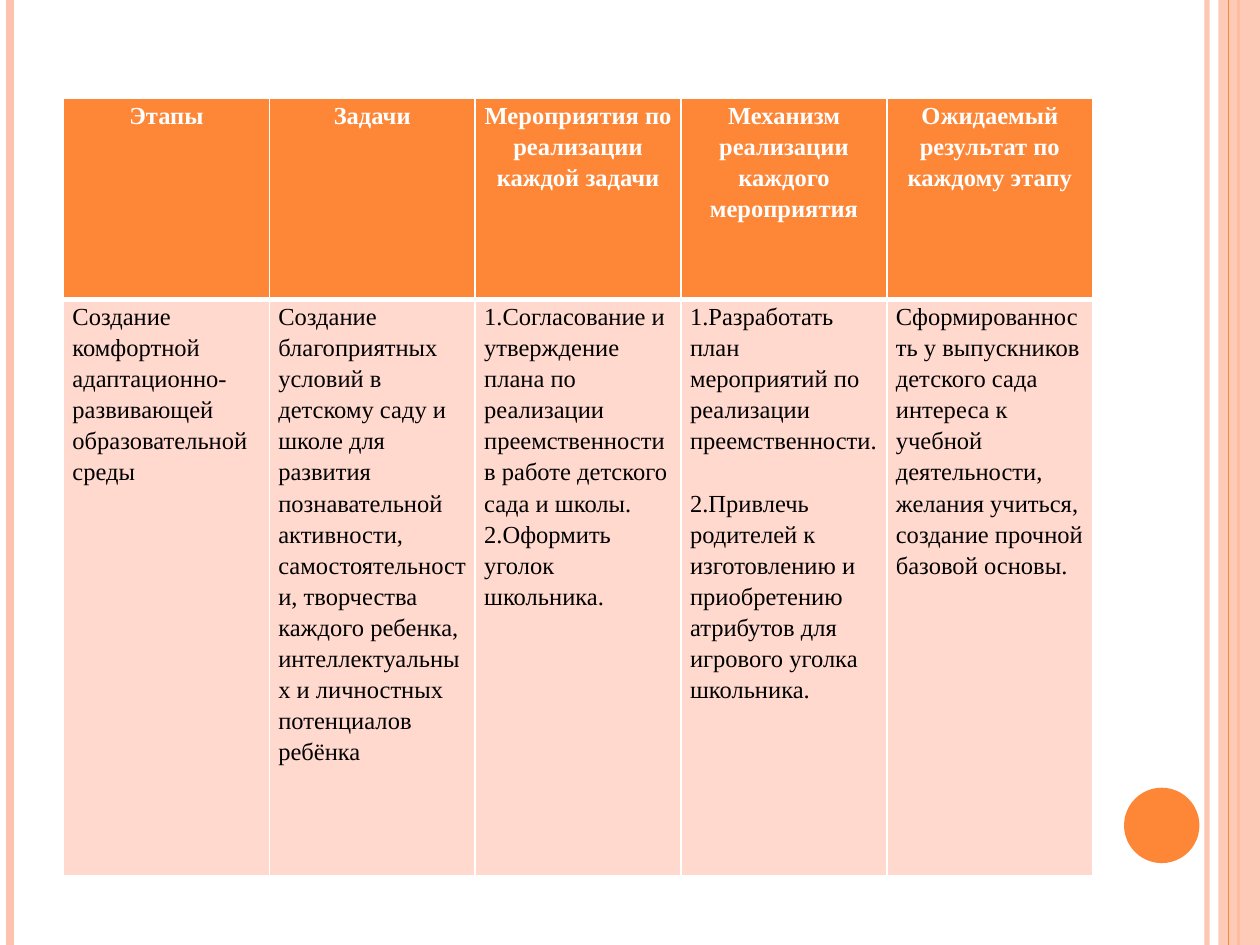
from dataclasses import dataclass
from typing import Optional

from lxml import etree
from pptx import Presentation
from pptx import util as u
from pptx.dml.color import RGBColor
from pptx.enum import shapes, text
from pptx.oxml import ns

COLORS = {
    "orange": "FE8637",
    "peach": "FEC3AE",
    "pale": "FFD9CE",
    "white": "FFFFFF",
    "black": "000000",
}
FONT = "Times New Roman"
SLIDE_WIDTH, SLIDE_HEIGHT = u.Cm(25.4), u.Cm(19.05)
COLUMN_WIDTH = u.Cm(4.15)
HEADER_HEIGHT, BODY_HEIGHT = u.Cm(4.06), u.Cm(11.61)
BLANK_LINE = u.Pt(17.8)


@dataclass
class Stripe:
    x: float
    color: str
    width: float
    opacity: Optional[int] = None


@dataclass
class Stage:
    heading: str
    items: list[str]
    gap: u.Length = u.Pt(0)


BACK_STRIPES = [
    Stripe(24.33, "peach", 3, 93),
    Stripe(0.21, "peach", 4.5),
    Stripe(24.97, "orange", 1.5),
]
FRONT_STRIPE = Stripe(24.77, "orange", 0.75)

STAGES = [
    Stage("Этапы", [
        "Создание комфортной адаптационно-развивающей образовательной среды"]),
    Stage("Задачи", [
        "Создание благоприятных условий в детскому саду и школе для развития "
        "познавательной активности, самостоятельности, творчества каждого "
        "ребенка, интеллектуальных и личностных потенциалов ребёнка"]),
    Stage("Мероприятия по реализации каждой задачи", [
        "1.Согласование и утверждение плана по реализации преемственности "
        "в работе детского сада и школы.",
        "2.Оформить уголок школьника."]),
    Stage("Механизм реализации каждого мероприятия", [
        "1.Разработать план мероприятий по реализации преемственности.",
        "2.Привлечь родителей к изготовлению и приобретению атрибутов "
        "для игрового уголка школьника."], BLANK_LINE),
    Stage("Ожидаемый результат по каждому этапу", [
        "Сформированность у выпускников детского сада интереса к учебной "
        "деятельности, желания учиться, создание прочной базовой основы."]),
]


def rgb(name: str) -> RGBColor:
    return RGBColor.from_string(COLORS[name])


def set_opacity(properties, percent: int) -> None:
    color = properties.find(".//" + ns.qn("a:srgbClr"))
    etree.SubElement(color, ns.qn("a:alpha"), val=str(percent * 1000))


def draw_stripe(slide, stripe: Stripe) -> None:
    x = u.Cm(stripe.x)
    line = slide.shapes.add_connector(
        shapes.MSO_CONNECTOR.STRAIGHT, x, 0, x, SLIDE_HEIGHT)
    line.line.color.rgb = rgb(stripe.color)
    line.line.width = u.Pt(stripe.width)
    properties = line._element.spPr
    if stripe.opacity:
        set_opacity(properties, stripe.opacity)
    etree.SubElement(properties, ns.qn("a:effectLst"))


def draw_solid(slide, kind, left: float, top: float, width: float,
               height: float, color: str):
    solid = slide.shapes.add_shape(
        kind, u.Cm(left), u.Cm(top), u.Cm(width), u.Cm(height))
    solid.shadow.inherit = False
    solid.fill.solid()
    solid.fill.fore_color.rgb = rgb(color)
    solid.line.fill.background()
    return solid


def set_borders(cell, top: float, bottom: float) -> None:
    properties = cell._tc.get_or_add_tcPr()
    for side, width in (("L", 1), ("R", 1), ("T", top), ("B", bottom)):
        border = etree.SubElement(
            properties, ns.qn(f"a:ln{side}"), w=str(u.Pt(width)))
        fill = etree.SubElement(border, ns.qn("a:solidFill"))
        etree.SubElement(fill, ns.qn("a:srgbClr"), val=COLORS["white"])


def fill_cell(cell, items: list[str], header: bool,
              gap: u.Length = u.Pt(0)) -> None:
    set_borders(cell, *((1, 3) if header else (3, 1)))
    cell.fill.solid()
    cell.fill.fore_color.rgb = rgb("orange" if header else "pale")
    cell.margin_left = cell.margin_right = u.Cm(0.18)
    cell.margin_top = cell.margin_bottom = 0
    cell.text_frame.text = "\n".join(items)
    for index, paragraph in enumerate(cell.text_frame.paragraphs):
        paragraph.alignment = (
            text.PP_ALIGN.CENTER if header else text.PP_ALIGN.LEFT)
        paragraph.line_spacing = 1.15
        if index and gap:
            paragraph.space_before = gap
        paragraph.font.name = FONT
        paragraph.font.size = u.Pt(14)
        paragraph.font.bold = header
        paragraph.font.color.rgb = rgb("white" if header else "black")


def draw_stage_table(slide, stages: list[Stage]) -> None:
    table = slide.shapes.add_table(
        2, len(stages), u.Cm(1.28), u.Cm(1.98),
        COLUMN_WIDTH * len(stages), HEADER_HEIGHT + BODY_HEIGHT).table
    table.horz_banding = False
    table.rows[0].height, table.rows[1].height = HEADER_HEIGHT, BODY_HEIGHT
    for column, stage in enumerate(stages):
        table.columns[column].width = COLUMN_WIDTH
        fill_cell(table.cell(0, column), [stage.heading], header=True)
        fill_cell(table.cell(1, column), stage.items, False, stage.gap)


def main() -> None:
    deck = Presentation()
    deck.slide_width, deck.slide_height = SLIDE_WIDTH, SLIDE_HEIGHT
    slide = deck.slides.add_slide(deck.slide_layouts[6])
    slide.background.fill.solid()
    slide.background.fill.fore_color.rgb = rgb("white")

    # Side decoration
    for stripe in BACK_STRIPES:
        draw_stripe(slide, stripe)
    side_band = draw_solid(
        slide, shapes.MSO_SHAPE.RECTANGLE, 24.56, 0, 0.84, 19.05, "peach")
    set_opacity(side_band._element.spPr, 87)
    draw_stripe(slide, FRONT_STRIPE)
    draw_solid(slide, shapes.MSO_SHAPE.OVAL, 22.66, 15.88, 1.52, 1.52, "orange")

    # Plan of stages
    draw_stage_table(slide, STAGES)

    deck.save("out.pptx")


if __name__ == "__main__":
    main()
